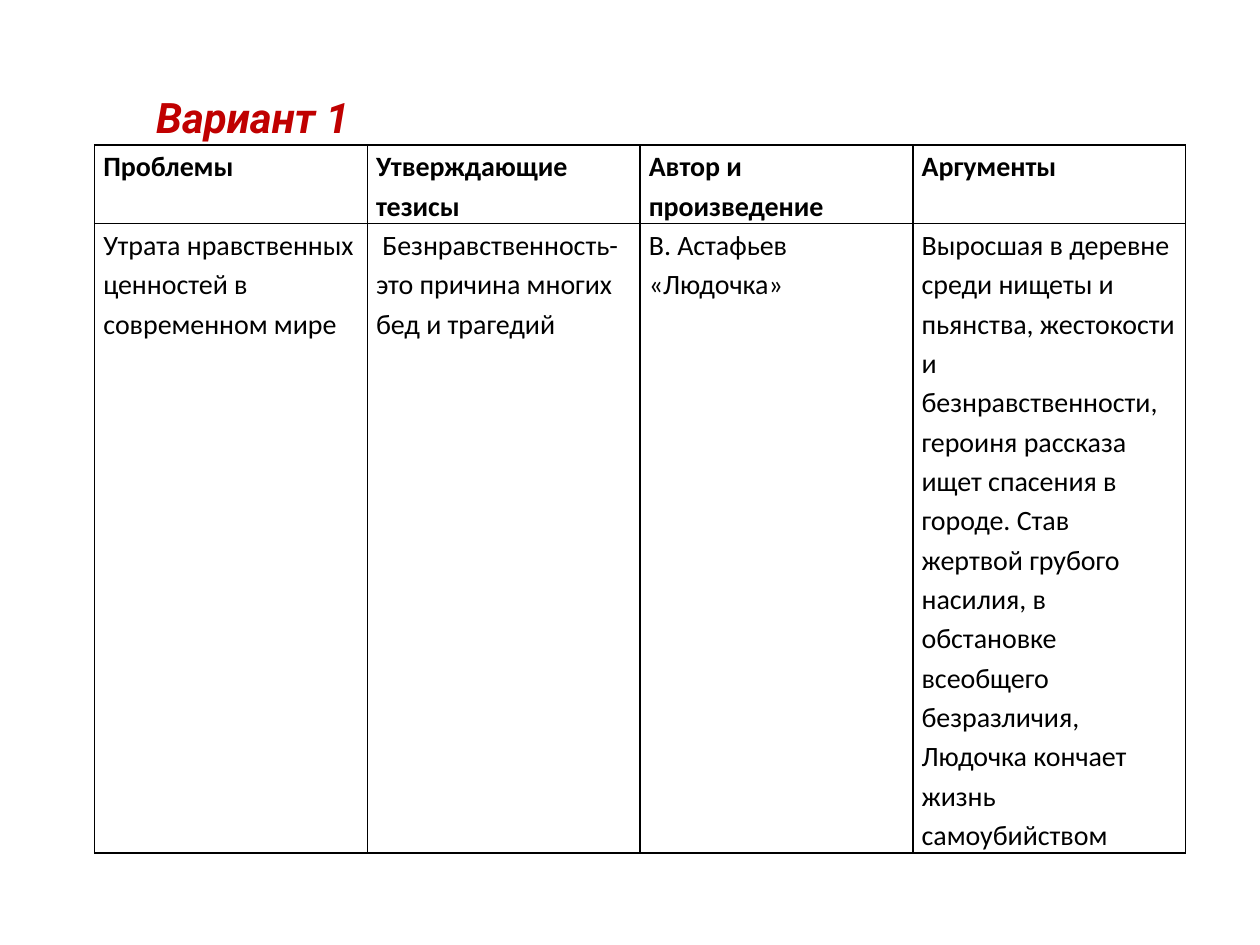
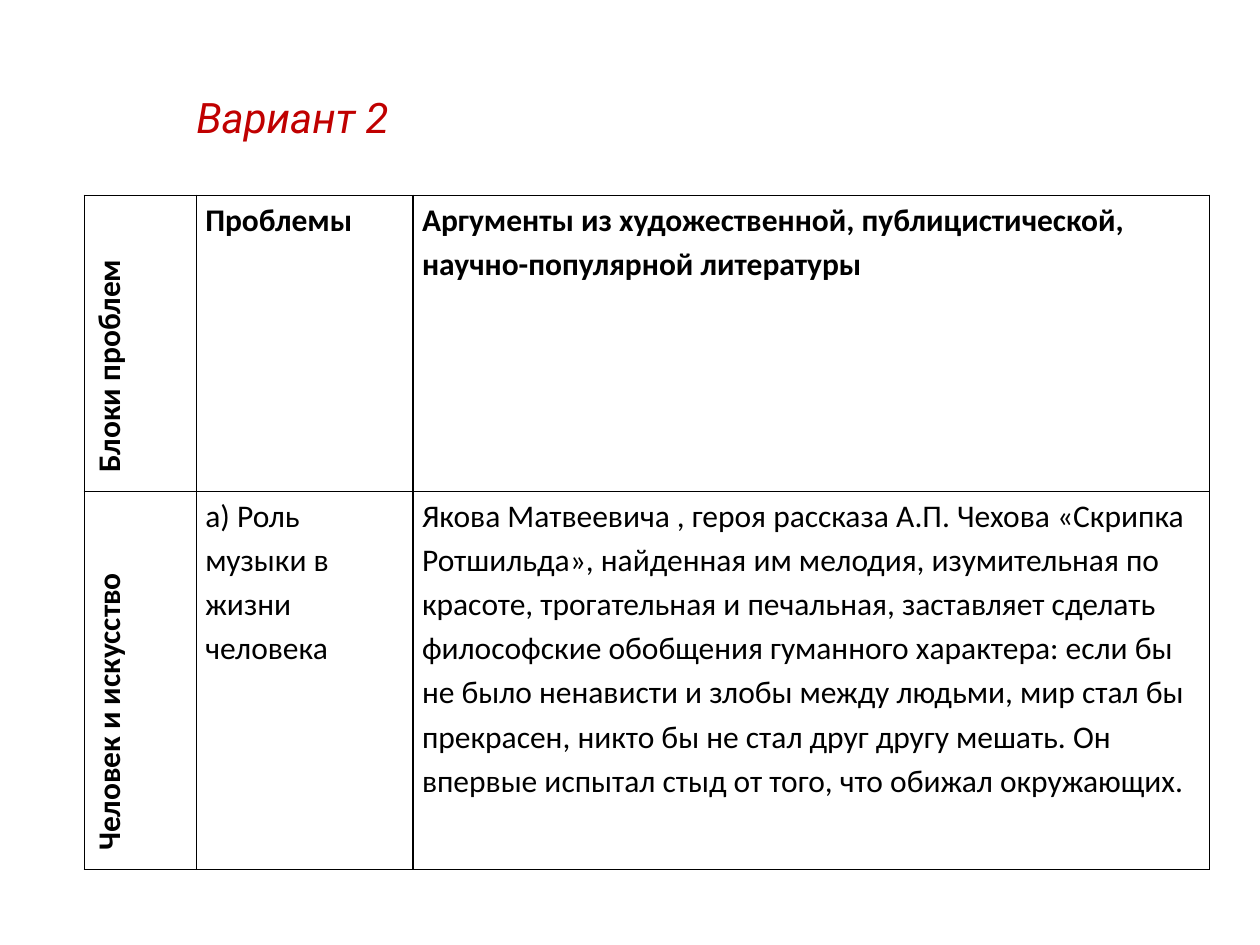
from lxml.etree import SubElement
from pptx import Presentation
from pptx.dml.color import RGBColor
from pptx.enum.text import MSO_AUTO_SIZE, MSO_ANCHOR
from pptx.oxml.ns import qn
from pptx.util import Inches, Pt

BLACK = RGBColor(0x00, 0x00, 0x00)
WHITE = RGBColor(0xFF, 0xFF, 0xFF)
CRIMSON = RGBColor(0xC0, 0x00, 0x00)

GRID_COLUMNS, GRID_ROWS = 100, 75
BORDER_SIDES = ("a:lnL", "a:lnR", "a:lnT", "a:lnB")
TITLE_FORMAT = {"name": "Roboto", "size": Pt(24), "italic": True}
BODY_FORMAT = {"name": "Calibri"}
CELL_FORMAT = {
    "margin_left": Inches(0.07),
    "margin_right": Inches(0.07),
    "margin_top": 0,
    "margin_bottom": 0,
    "vertical_anchor": MSO_ANCHOR.TOP,
}
TABLE_FLAGS = {"first_row": False, "horz_banding": False}


def apply_format(target, values):
    """Set every attribute in values on the target."""
    for name, value in values.items():
        setattr(target, name, value)


class Deck:
    """Hold the presentation, its grid and the current slide."""

    def __init__(self):
        """Start a presentation of 10 by 7.5 inches."""
        self.presentation = Presentation()
        self.presentation.slide_width = Inches(10)
        self.presentation.slide_height = Inches(7.5)
        self.slide = None

    def across(self, columns):
        """Turn grid columns into a length."""
        return round(self.presentation.slide_width * columns / GRID_COLUMNS)

    def down(self, rows):
        """Turn grid rows into a length."""
        return round(self.presentation.slide_height * rows / GRID_ROWS)

    def add_slide(self):
        """Open a blank slide."""
        self.slide = self.presentation.slides.add_slide(self.presentation.slide_layouts[6])

    def add_text(self, paragraph, text, values, colour):
        """Add one formatted run to a paragraph."""
        run = paragraph.add_run()
        run.text = text
        apply_format(run.font, values)
        run.font.color.rgb = colour

    def add_title(self, text, left, width, bold):
        """Place the slide title on the shared title line."""
        shape = self.slide.shapes.add_textbox(
            self.across(left), self.down(6.8), self.across(width), self.down(5)
        )
        frame = shape.text_frame
        apply_format(frame, {"word_wrap": False, "auto_size": MSO_AUTO_SIZE.SHAPE_TO_FIT_TEXT})
        self.add_text(frame.paragraphs[0], text, TITLE_FORMAT | {"bold": bold}, CRIMSON)

    def add_borders(self, cell):
        """Draw a thin black line on each side of a cell."""
        properties = cell._tc.get_or_add_tcPr()
        for side in BORDER_SIDES:
            line = SubElement(properties, qn(side), w=str(Pt(1)))
            fill = SubElement(line, qn("a:solidFill"))
            SubElement(fill, qn("a:srgbClr"), val=str(BLACK))

    def fill_cell(self, cell, text, size, bold, upright):
        """Style a cell and add its lines as paragraphs."""
        self.add_borders(cell)
        cell.fill.solid()
        cell.fill.fore_color.rgb = WHITE
        apply_format(cell, CELL_FORMAT)
        if upright:
            cell._tc.get_or_add_tcPr().set("vert", "vert270")
        frame = cell.text_frame
        for index, line in enumerate(text.split("\n")):
            paragraph = frame.add_paragraph() if index else frame.paragraphs[0]
            paragraph.line_spacing = 1.15
            if upright:
                paragraph._p.get_or_add_pPr().set("marL", str(self.across(0.8)))
            self.add_text(paragraph, line, BODY_FORMAT | {"size": Pt(size), "bold": bold}, BLACK)

    def add_table(self, left, top, widths, heights, content, size, upright_first=False):
        """Place a ruled table with a bold heading row."""
        frame = self.slide.shapes.add_table(
            len(heights), len(widths), self.across(left), self.down(top),
            self.across(sum(widths)), self.down(sum(heights)),
        )
        table = frame.table
        apply_format(table, TABLE_FLAGS)
        for column, width in zip(table.columns, widths):
            column.width = self.across(width)
        for row, height in zip(table.rows, heights):
            row.height = self.down(height)
        for row_index, texts in enumerate(content):
            for column_index, text in enumerate(texts):
                upright = upright_first and column_index == 0
                bold = upright or row_index == 0
                self.fill_cell(table.cell(row_index, column_index), text, size, bold, upright)


ARGUMENTS_BY_AUTHOR = (
    ("Проблемы", "Утверждающие тезисы", "Автор и произведение", "Аргументы"),
    (
        "Утрата нравственных ценностей в современном мире",
        " Безнравственность- это причина многих бед и трагедий",
        "В. Астафьев\n«Людочка»",
        "Выросшая в деревне среди нищеты и пьянства, жестокости и безнравственности, "
        "героиня рассказа ищет спасения в городе. Став жертвой грубого насилия, "
        "в обстановке всеобщего безразличия, Людочка кончает жизнь самоубийством",
    ),
)
ARGUMENTS_BY_BLOCK = (
    (
        "Блоки проблем",
        "Проблемы",
        "Аргументы из художественной, публицистической, научно-популярной литературы",
    ),
    (
        "Человек и искусство",
        "а) Роль музыки в жизни человека",
        "Якова Матвеевича , героя рассказа А.П. Чехова «Скрипка Ротшильда», найденная им "
        "мелодия, изумительная по красоте, трогательная и печальная, заставляет сделать "
        "философские обобщения гуманного характера: если бы не было ненависти и злобы "
        "между людьми, мир стал бы прекрасен, никто бы не стал друг другу мешать. "
        "Он впервые испытал стыд от того, что обижал окружающих.",
    ),
)


def main():
    """Build both slides and save them."""
    deck = Deck()

    deck.add_slide()
    deck.add_table(7.5, 11.5, [21.65] * 4, [5.9, 46.9], ARGUMENTS_BY_AUTHOR, 16)
    deck.add_title("Вариант 1", 11.4, 18, bold=True)

    deck.add_slide()
    deck.add_table(
        6.7, 15.5, [8.9, 17.2, 63.2], [23.5, 30], ARGUMENTS_BY_BLOCK, 18, upright_first=True
    )
    deck.add_title("Вариант 2", 14.6, 17.7, bold=False)

    deck.presentation.save("out.pptx")


if __name__ == "__main__":
    main()
